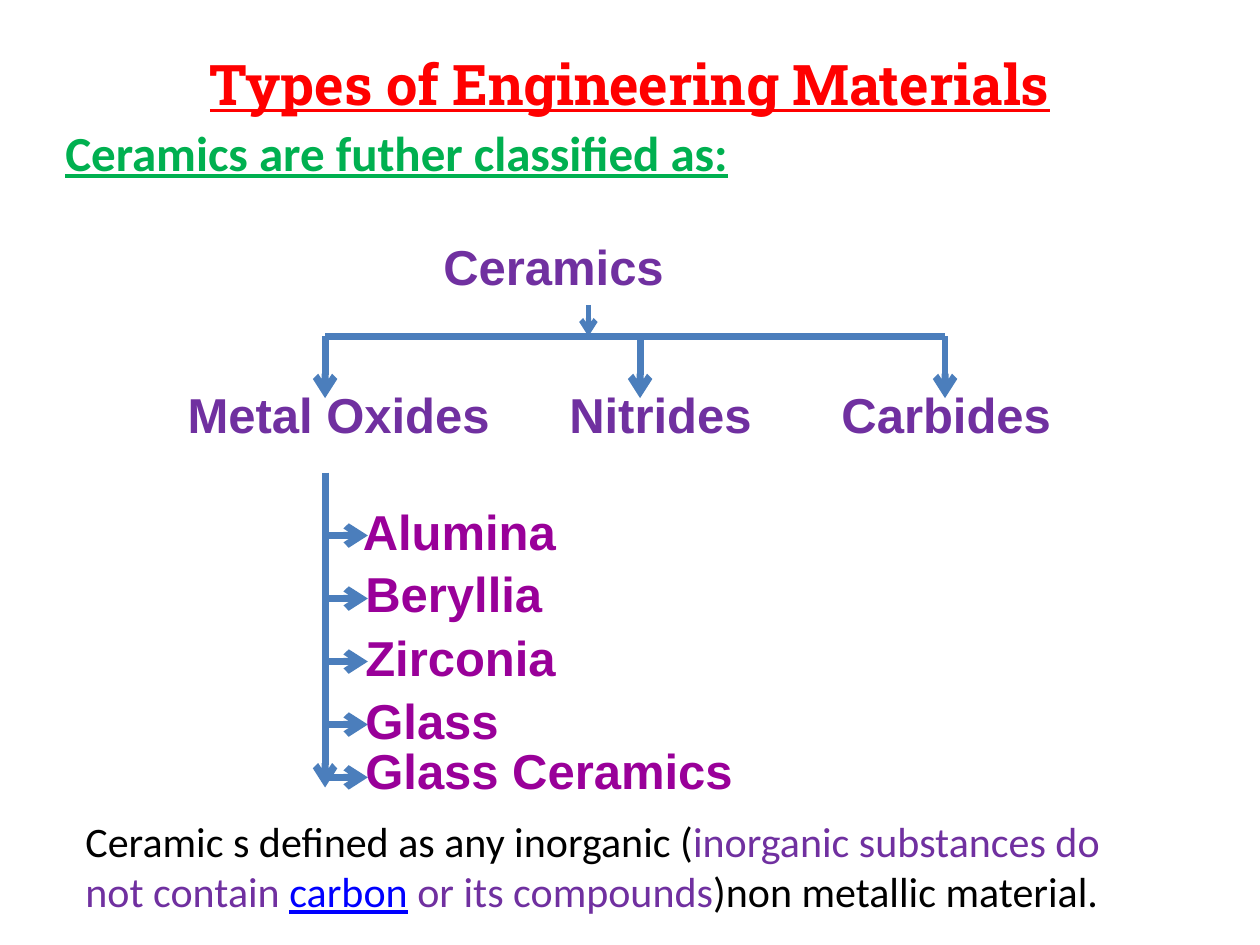
from lxml import etree
from pptx import Presentation
from pptx.dml.color import RGBColor
from pptx.enum.shapes import MSO_CONNECTOR as Connector
from pptx.enum.text import PP_ALIGN as Align
from pptx.oxml.ns import qn
from pptx.util import Inches, Pt

COLORS = {
    "title": "FF0000",
    "heading": "00B050",
    "class": "7030A0",
    "oxide": "990099",
    "line": "4B7EBC",
    "body": "000000",
    "link": "0000FF",
}
TRUNK_X = 2.58
BAR_Y = 2.67
BRANCHES = [  # name, box left, box width, text inset, arrow x
    ("Metal Oxides", 1.17, 2.83, 0.32, TRUNK_X),
    ("Nitrides", 4.42, 2.75, 0.1, 5.08),
    ("Carbides", 6.58, 2.75, 0.1, 7.5),
]
OXIDES = [  # name, box left, box top, box width, text inset, arrow y
    ("Alumina", 2.67, 3.93, 2.5, 0.21, 4.25),
    ("Beryllia", TRUNK_X, 4.42, 3.17, 0.32, 4.75),
    ("Zirconia", TRUNK_X, 4.93, 3.33, 0.32, 5.25),
    ("Glass", TRUNK_X, 5.43, 2.92, 0.32, 5.75),
    ("Glass Ceramics", TRUNK_X, 5.83, 3.42, 0.32, 6.17),
]
DEFINITION = [
    ("Ceramic s defined as any inorganic (", "body"),
    ("inorganic substances do not contain ", "class"),
    ("carbon", "link"),
    (" or its compounds", "class"),
    (")non metallic material.", "body"),
]


def add_text(page, place, spans, font, size, bold=True, underlined=(), inset=0.1):
    """Add one paragraph of (text, colour name) spans; underline the named colours."""
    box = page.shapes.add_textbox(*map(Inches, place))
    frame = box.text_frame
    frame.word_wrap = True
    frame.margin_left = Inches(inset)
    for text, color in spans:
        span = frame.paragraphs[0].add_run()
        span.text = text
        span.font.name = font
        span.font.size = Pt(size)
        span.font.bold = bold
        span.font.underline = color in underlined
        span.font.color.rgb = RGBColor.from_string(COLORS[color])
    return frame


def add_label(page, place, text, color, inset=0.1):
    add_text(page, place, [(text, color)], "Arial", 28, inset=inset)


def add_line(page, start, end, width=4, arrow=True):
    line = page.shapes.add_connector(Connector.STRAIGHT, *map(Inches, start + end))
    line.line.width = Pt(width)
    line.line.color.rgb = RGBColor.from_string(COLORS["line"])
    if arrow:
        etree.SubElement(line.line._get_or_add_ln(), qn("a:tailEnd"), type="arrow")
    etree.SubElement(line._element.spPr, qn("a:effectLst"))


def add_headings(page):
    title = add_text(page, (0.5, 0.3, 9, 1.25),
                     [("Types of Engineering Materials", "title")],
                     "Roboto Slab", 32, underlined=["title"])
    title.margin_top = Inches(0.09)
    title.paragraphs[0].alignment = Align.CENTER
    add_text(page, (0.42, 0.92, 9.03, 5.25),
             [("Ceramics are futher classified as:", "heading")],
             "Calibri", 28, underlined=["heading"])


def add_tree(page):
    add_label(page, (3.42, 1.83, 3.42, 0.57), "Ceramics", "class")
    add_line(page, (4.67, 2.42), (4.67, BAR_Y), width=3)
    add_line(page, (TRUNK_X, BAR_Y), (7.5, BAR_Y), arrow=False)
    for name, left, width, inset, x in BRANCHES:
        add_line(page, (x, BAR_Y), (x, 3.16))
        add_label(page, (left, 3, width, 0.57), name, "class", inset)

    add_line(page, (TRUNK_X, 3.75), (TRUNK_X, 6.25))
    for name, left, top, width, inset, y in OXIDES:
        add_line(page, (TRUNK_X, y), (2.92, y))
        add_label(page, (left, top, width, 0.57), name, "oxide", inset)


def main():
    deck = Presentation()
    deck.slide_width, deck.slide_height = Inches(10), Inches(7.5)
    page = deck.slides.add_slide(deck.slide_layouts[6])
    add_headings(page)
    add_tree(page)
    add_text(page, (0.58, 6.42, 8.42, 0.91), DEFINITION, "Calibri", 24,
             bold=False, underlined=["link"])
    deck.save("out.pptx")


if __name__ == "__main__":
    main()
